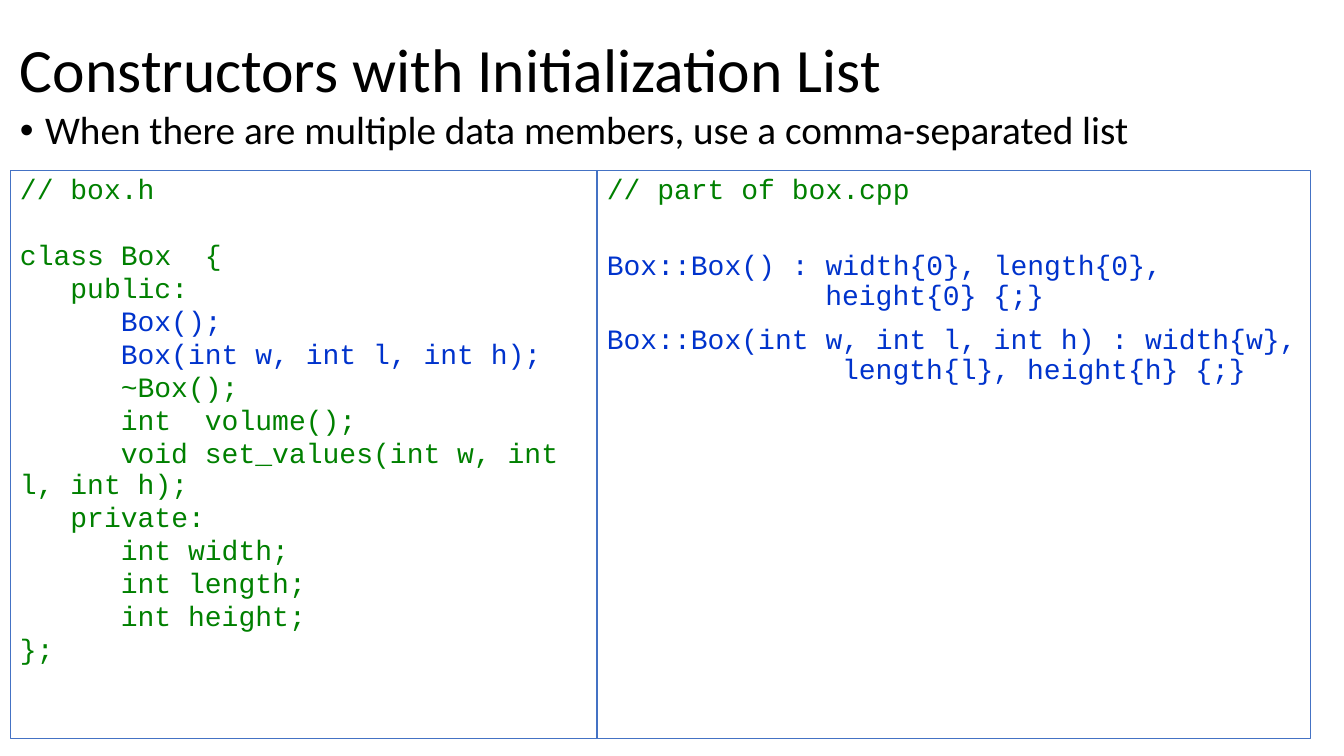
"""Build a slide on C++ constructors with an initialization list."""
from lxml.etree import SubElement
from pptx import Presentation
from pptx.dml.color import RGBColor
from pptx.enum.shapes import MSO_SHAPE
from pptx.enum.text import MSO_ANCHOR as Anchor, PP_ALIGN as Align
from pptx.oxml.ns import qn
from pptx.util import Pt

PX = 9144
SLIDE_SIZE = (1333, 750)
BLACK = RGBColor(0x00, 0x00, 0x00)
GREEN = RGBColor(0x00, 0x80, 0x00)
BLUE = RGBColor(0x00, 0x33, 0xCC)
BORDER = RGBColor(0x44, 0x72, 0xC4)

TITLE = "Constructors with Initialization List"
TITLE_BOX = (10, 16, 1216, 111)
BULLET = "When there are multiple data members, use a comma-separated list"
BULLET_BOX = (10, 105, 1314, 595)
BULLET_INDENT = 25 * PX

CODE_SIZE = 20
CHARACTER_WIDTH = Pt(CODE_SIZE * 0.6)
PANEL_TOP, PANEL_HEIGHT = 169, 564

# Each code line: text, indent in characters, colour, points before.
HEADER_LINES = [
    ("// box.h", 0, GREEN, 0),
    ("class Box  {", 0, GREEN, 23.6),
    ("public:", 3, GREEN, 0),
    ("Box();", 6, BLUE, 0),
    ("Box(int w, int l, int h);", 6, BLUE, 0),
    ("~Box();", 6, GREEN, 0),
    ("int  volume();", 6, GREEN, 0),
    ("void set_values(int w, int l, int h);", 6, GREEN, 0),
    ("private:", 3, GREEN, 0),
    ("int width;", 6, GREEN, 0),
    ("int length;", 6, GREEN, 0),
    ("int height;", 6, GREEN, 0),
    ("};", 0, GREEN, 0),
]
SOURCE_LINES = [
    ("// part of box.cpp", 0, GREEN, 0),
    ("Box::Box() : width{0}, length{0},", 0, BLUE, 32.5),
    ("height{0} {;}", 13, BLUE, 0),
    ("Box::Box(int w, int l, int h) : width{w},", 0, BLUE, 10),
    ("length{l}, height{h} {;}", 14, BLUE, 0),
]
PANELS = [(10, 583, HEADER_LINES, 2), (592, 708, SOURCE_LINES, 0)]


def scaled(box):
    return [length * PX for length in box]


def write(paragraph, text, font_format, before=0, after=0):
    layout = {"alignment": Align.LEFT, "line_spacing": 0.9,
              "space_before": Pt(before), "space_after": Pt(after)}
    for name, value in layout.items():
        setattr(paragraph, name, value)
    run = paragraph.add_run()
    run.text = text
    run.font.color.rgb = font_format["color"]
    for name in ("name", "size"):
        setattr(run.font, name, font_format[name])


def indent(paragraph, margin, first_line):
    properties = paragraph._p.get_or_add_pPr()
    properties.set("marL", str(margin))
    properties.set("indent", str(first_line))
    return properties


def add_text(slide, box, text, size, anchor):
    frame = slide.shapes.add_textbox(*scaled(box)).text_frame
    frame.word_wrap = True
    frame.vertical_anchor = anchor
    paragraph = frame.paragraphs[0]
    write(paragraph, text, {"name": "Calibri", "size": Pt(size), "color": BLACK})
    return paragraph


def add_code_panel(slide, left, width, lines, after):
    box = scaled((left, PANEL_TOP, width, PANEL_HEIGHT))
    shape = slide.shapes.add_shape(MSO_SHAPE.RECTANGLE, *box)
    shape.shadow.inherit = False
    shape.fill.background()
    shape.line.color.rgb = BORDER
    shape.line.width = Pt(0.75)
    frame = shape.text_frame
    frame.word_wrap = True
    frame.vertical_anchor = Anchor.TOP
    for number, (text, characters, color, before) in enumerate(lines):
        paragraph = frame.add_paragraph() if number else frame.paragraphs[0]
        font_format = {"name": "Courier New", "size": Pt(CODE_SIZE), "color": color}
        write(paragraph, text, font_format, before, after)
        indent(paragraph, 0, characters * CHARACTER_WIDTH)


def main():
    presentation = Presentation()
    presentation.slide_width, presentation.slide_height = scaled(SLIDE_SIZE)
    slide = presentation.slides.add_slide(presentation.slide_layouts[6])
    add_text(slide, TITLE_BOX, TITLE, 44, Anchor.MIDDLE)
    paragraph = add_text(slide, BULLET_BOX, BULLET, 28, Anchor.TOP)
    properties = indent(paragraph, BULLET_INDENT, -BULLET_INDENT)
    SubElement(properties, qn("a:buFont")).set("typeface", "Arial")
    SubElement(properties, qn("a:buChar")).set("char", "•")
    for panel in PANELS:
        add_code_panel(slide, *panel)
    presentation.save("out.pptx")


if __name__ == "__main__":
    main()
